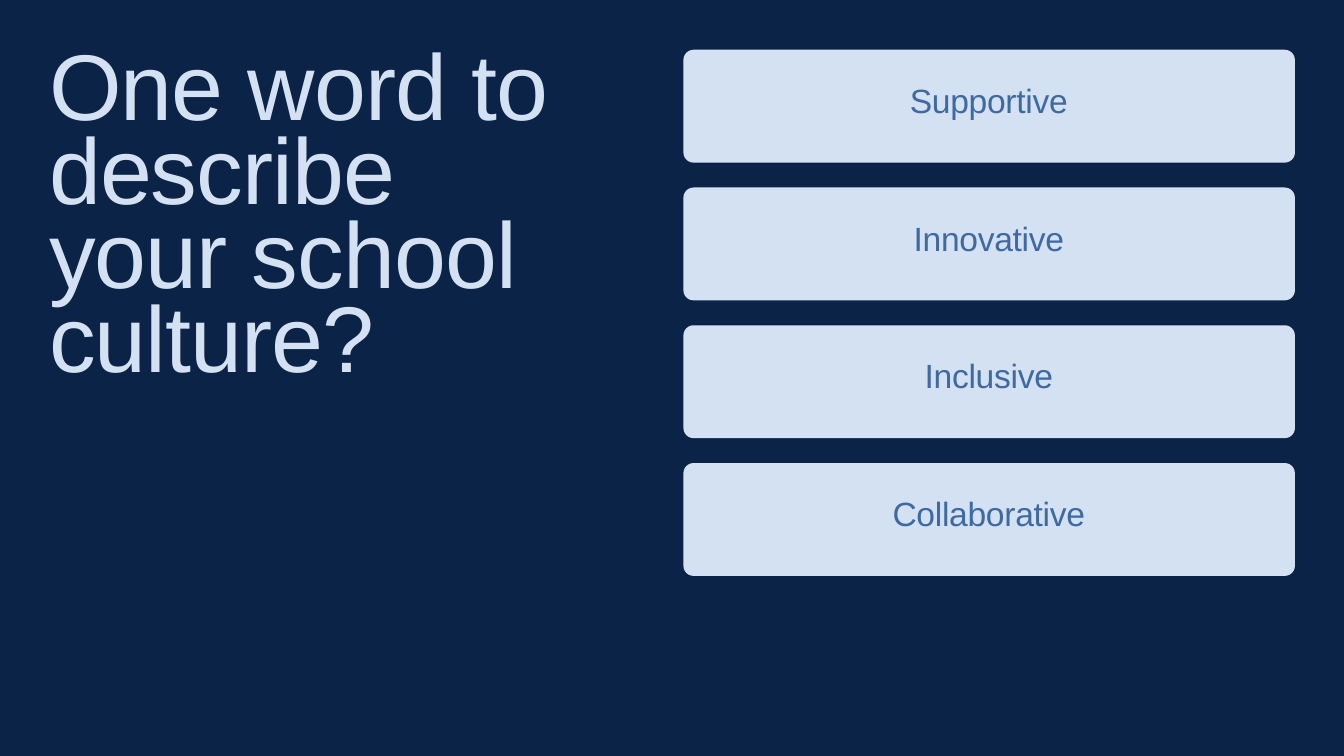
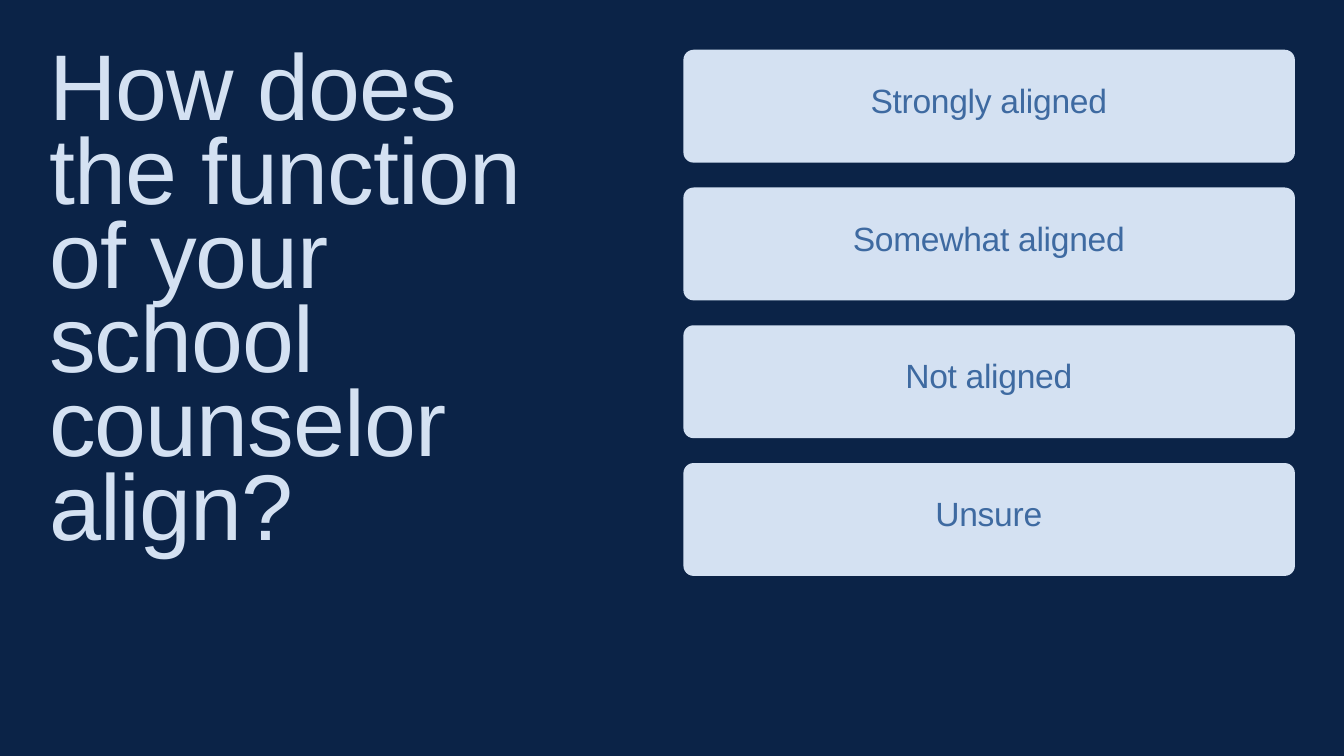
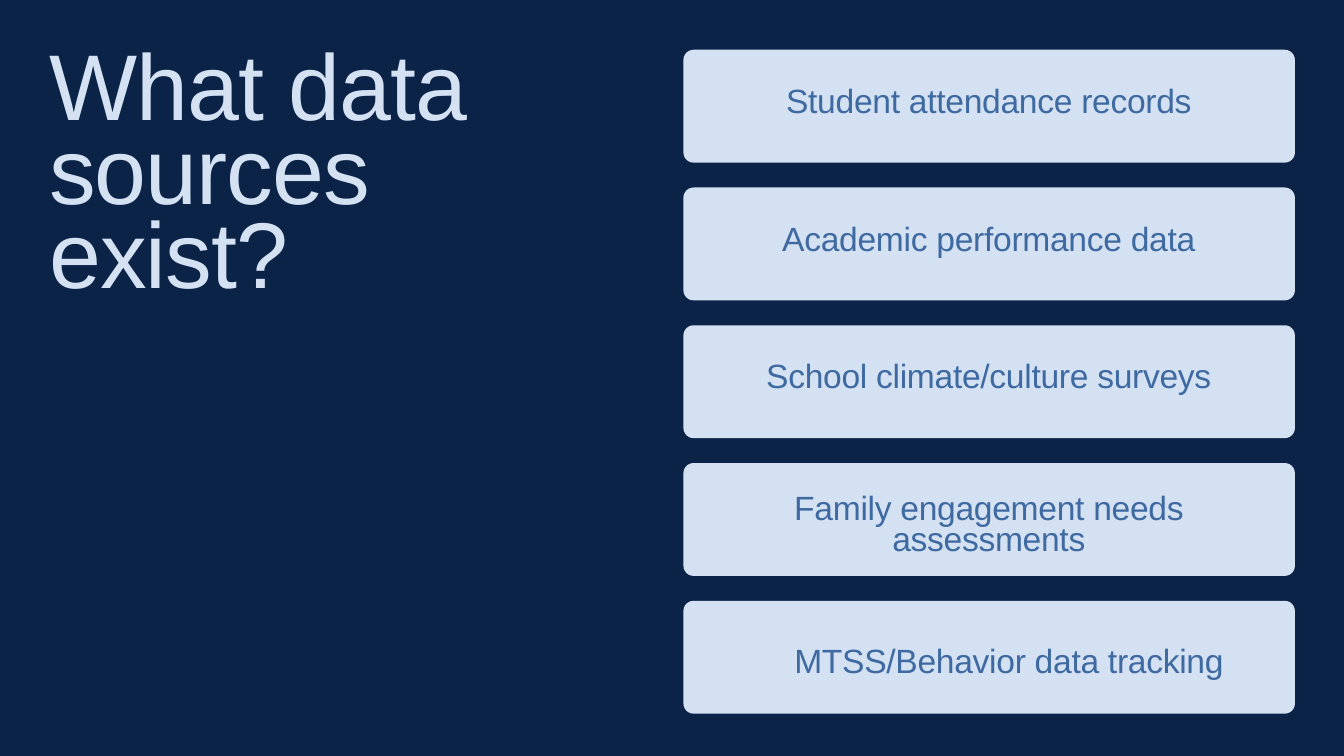
from dataclasses import dataclass

from pptx import Presentation
from pptx.dml.color import RGBColor
from pptx.enum.shapes import MSO_SHAPE
from pptx.enum.text import MSO_ANCHOR, MSO_AUTO_SIZE, PP_ALIGN
from pptx.util import Inches, Pt

ROUND = MSO_SHAPE.ROUNDED_RECTANGLE
TOP = MSO_ANCHOR.TOP
GROW = MSO_AUTO_SIZE.SHAPE_TO_FIT_TEXT
LEFT = PP_ALIGN.LEFT
CENTER = PP_ALIGN.CENTER


@dataclass(frozen=True)
class Type:
    size: float
    lead: float
    track: float
    color: RGBColor
    align: PP_ALIGN


@dataclass(frozen=True)
class Theme:
    font: str = "Arial"
    navy: RGBColor = RGBColor.from_string("0B2347")
    pale: RGBColor = RGBColor.from_string("D4E1F2")
    blue: RGBColor = RGBColor.from_string("3E6AA1")

    @property
    def title(self):
        return Type(100, 90, -1, self.pale, LEFT)

    @property
    def label(self):
        return Type(36, 33.6, -0.3, self.blue, CENTER)


@dataclass(frozen=True)
class Answer:
    text: str
    dx: float = 0.69
    dy: float = 0.58
    high: float = 0.48


THEME = Theme()
CARD_BOX = (10.17, 0.74, 9.1, 1.68)
STEP = 2.05
LABEL_WIDE = 7.71

POLLS = [
    ("One word to describe your school culture?", 7.82, [
        Answer("Supportive"),
        Answer("Innovative"),
        Answer("Inclusive"),
        Answer("Collaborative"),
    ]),
    ("How does the function of your school counselor align?", 9.07, [
        Answer("Strongly aligned"),
        Answer("Somewhat aligned"),
        Answer("Not aligned"),
        Answer("Unsure"),
    ]),
    ("What data sources exist?", 4.07, [
        Answer("Student attendance records"),
        Answer("Academic performance data"),
        Answer("School climate/culture surveys"),
        Answer("Family engagement needs assessments", dy=0.49, high=0.96),
        Answer("MTSS/Behavior data tracking", dx=0.99, dy=0.72),
    ]),
]


def place(shape, box):
    shape.left, shape.top, shape.width, shape.height = map(Inches, box)


def write(shape, text, kind):
    frame = shape.text_frame
    frame.text = text
    frame.word_wrap = True
    frame.auto_size = GROW
    frame.vertical_anchor = TOP
    frame.margin_left = frame.margin_right = 0
    frame.margin_top = frame.margin_bottom = 0
    para = frame.paragraphs[0]
    para.alignment = kind.align
    para.line_spacing = Pt(kind.lead)
    para.space_before = Pt(0)
    run = para.runs[0]
    run.font.name = THEME.font
    run.font.size = Pt(kind.size)
    run.font.color.rgb = kind.color
    run._r.get_or_add_rPr().set("spc", str(round(kind.track * 100)))


def add_title(slide, text, box):
    title = slide.shapes.title
    place(title, box)
    write(title, text, THEME.title)


def add_card(slide, answer, box):
    left, top, wide, high = box
    card = slide.shapes.add_shape(ROUND, *map(Inches, box))
    card.adjustments[0] = 0.09
    card.shadow.inherit = False
    card.fill.solid()
    card.fill.fore_color.rgb = THEME.pale
    card.line.fill.background()
    spot = (left + answer.dx, top + answer.dy, LABEL_WIDE, answer.high)
    label = slide.shapes.add_textbox(*map(Inches, spot))
    write(label, answer.text, THEME.label)


def add_poll(deck, layout, title, high, answers):
    slide = deck.slides.add_slide(layout)
    add_title(slide, title, (0.73, 0.82, 7.53, high))
    left, top, wide, tall = CARD_BOX
    for row, answer in enumerate(answers):
        add_card(slide, answer, (left, top + row * STEP, wide, tall))


def main():
    deck = Presentation()
    deck.slide_width = Inches(20)
    deck.slide_height = Inches(11.25)
    fill = deck.slide_master.background.fill
    fill.solid()
    fill.fore_color.rgb = THEME.navy
    layout = deck.slide_layouts.get_by_name("Title Only")
    for title, high, answers in POLLS:
        add_poll(deck, layout, title, high, answers)
    deck.save("out.pptx")


if __name__ == "__main__":
    main()
